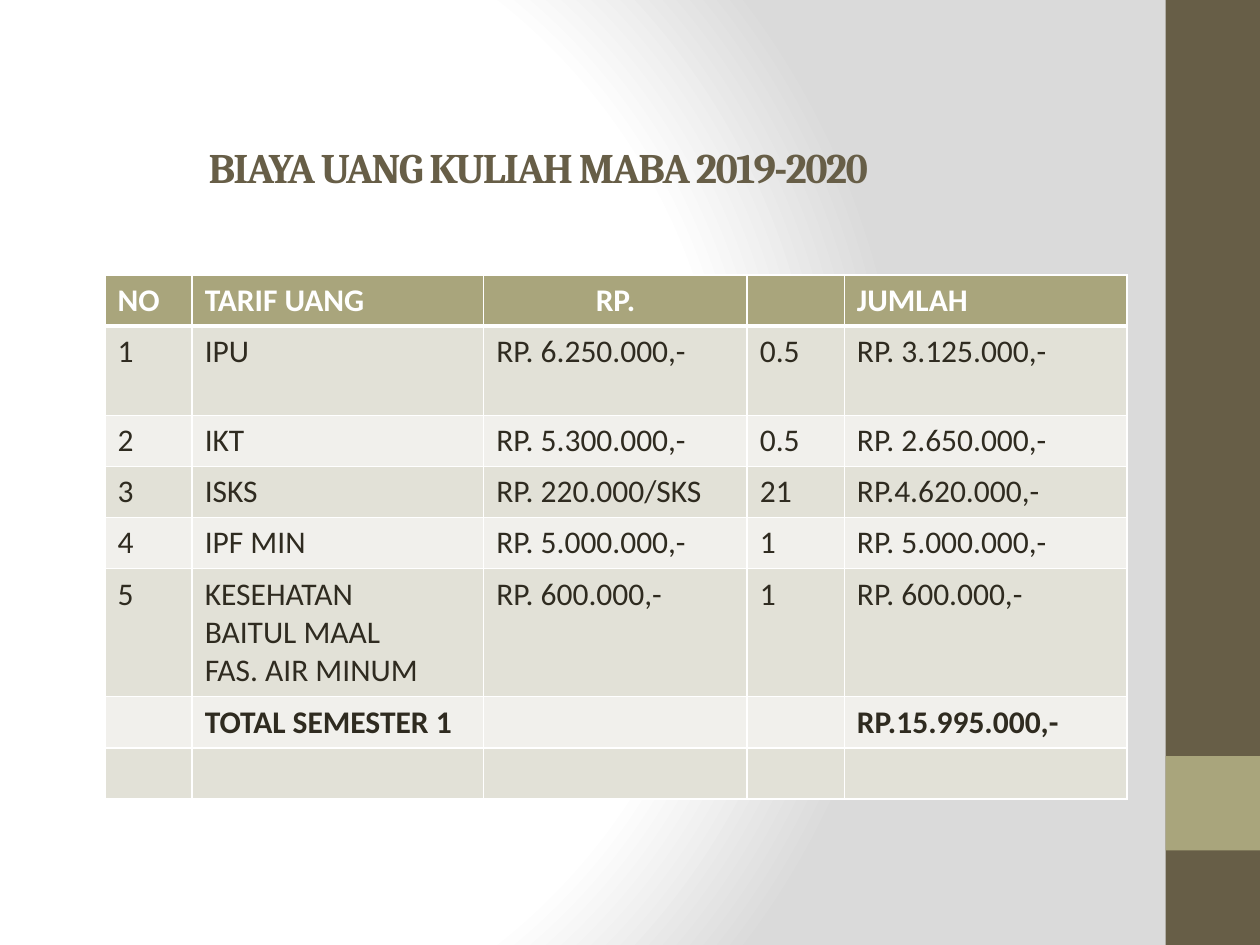
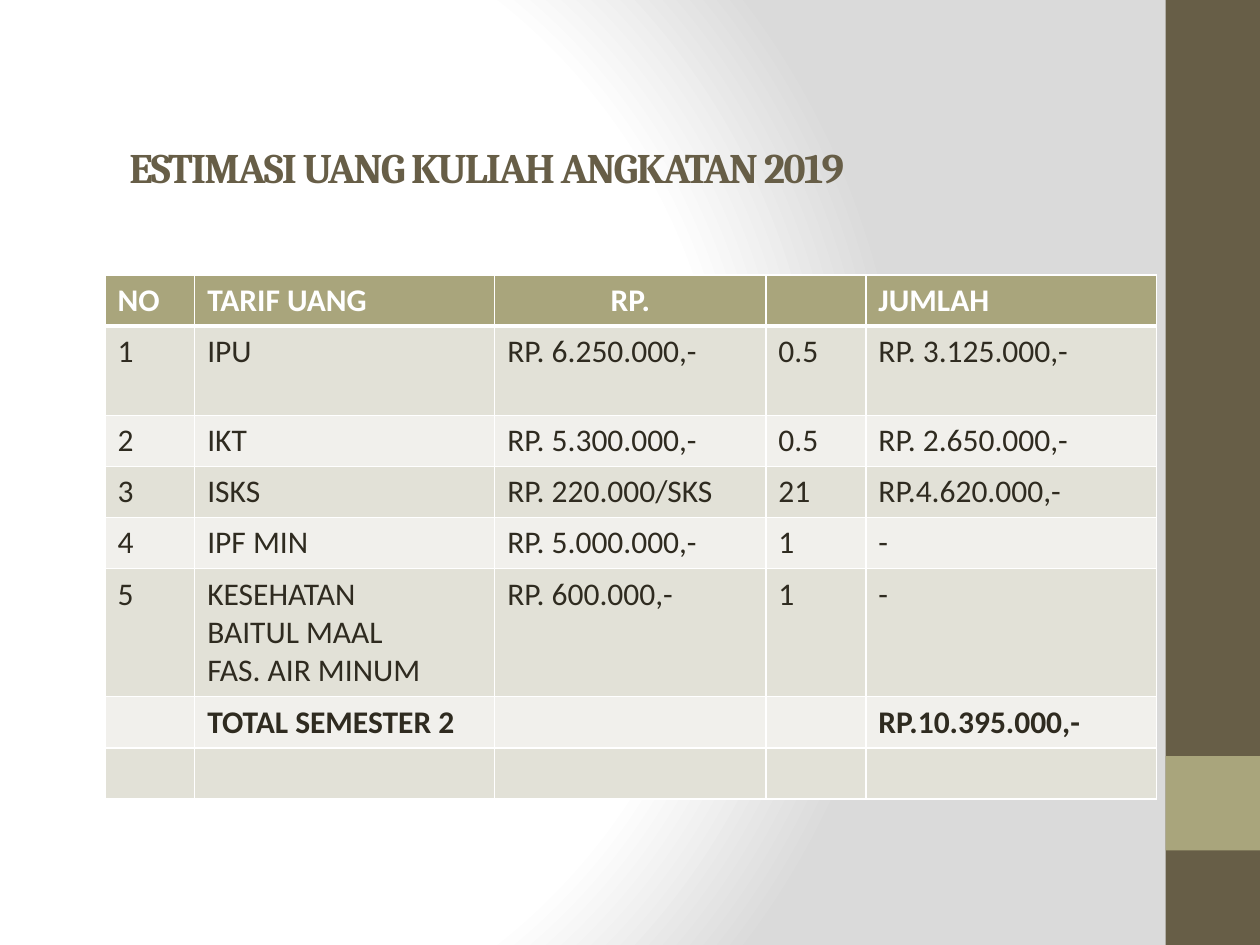
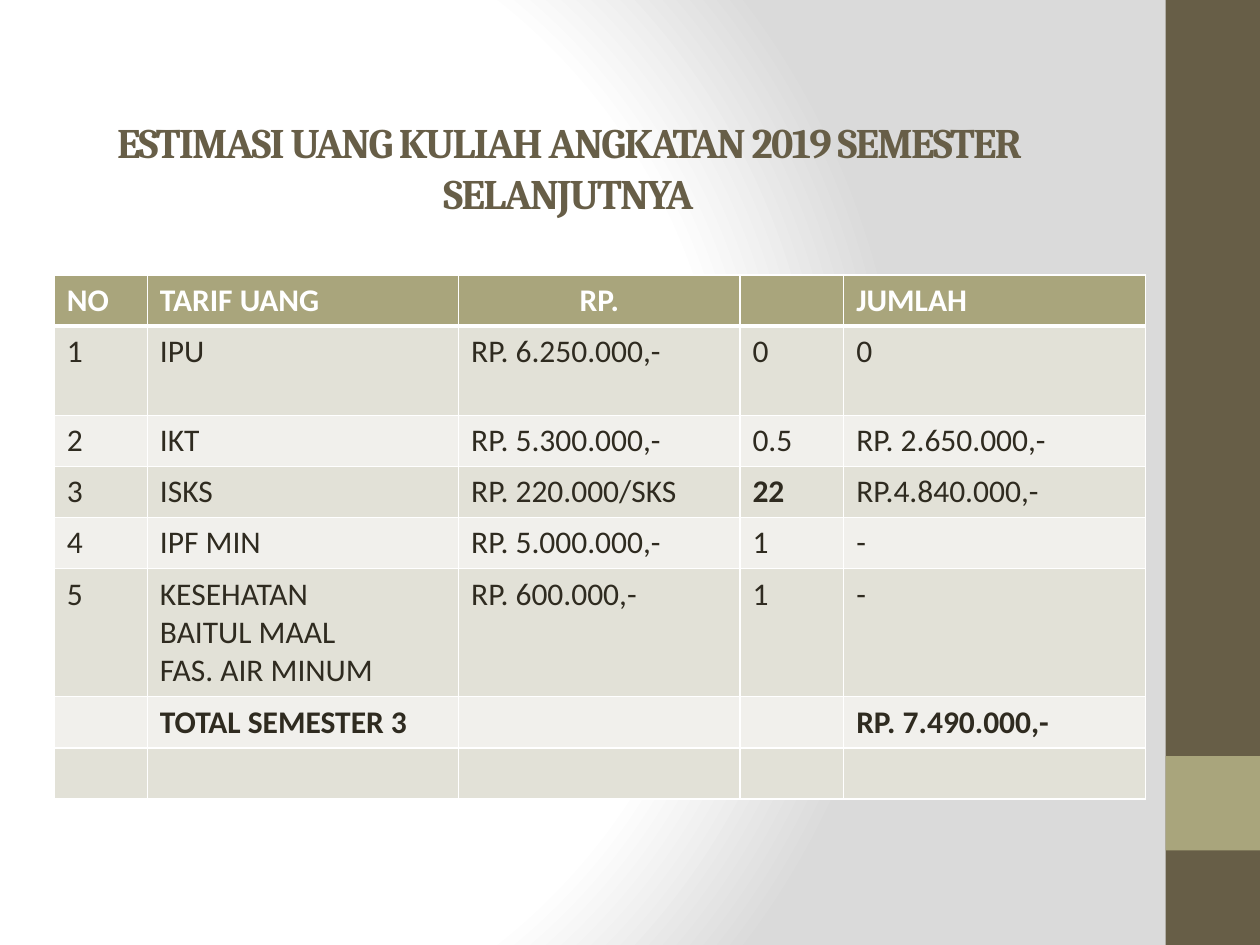
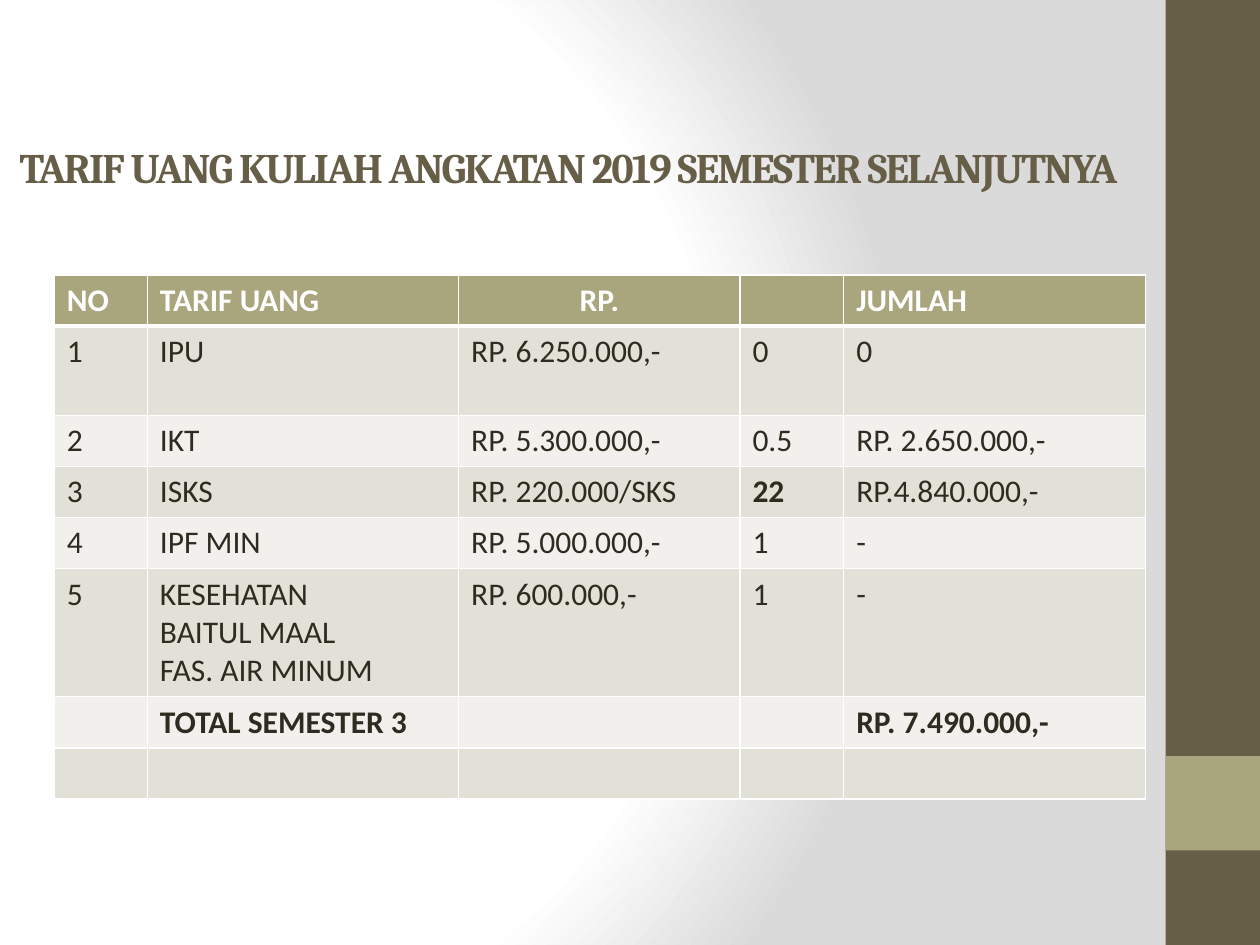
from dataclasses import dataclass

from pptx import Presentation
from pptx.dml.color import RGBColor
from pptx.enum.shapes import MSO_SHAPE
from pptx.enum.text import MSO_ANCHOR, MSO_AUTO_SIZE, PP_ALIGN
from pptx.oxml import parse_xml
from pptx.oxml.ns import nsdecls, qn
from pptx.slide import Slide, SlideMaster
from pptx.table import _Cell
from pptx.util import Pt

WHITE = RGBColor(0xFF, 0xFF, 0xFF)
GREY = RGBColor(0xDA, 0xDA, 0xDA)
BROWN = RGBColor(0x67, 0x5E, 0x47)
OLIVE = RGBColor(0xA9, 0xA5, 0x7C)
INK = RGBColor(0x2F, 0x2B, 0x20)
DARK = RGBColor(0xE2, 0xE1, 0xD7)
LIGHT = RGBColor(0xF1, 0xF0, 0xEC)

HEAD = ("NO", "TARIF UANG", "RP.", "", "JUMLAH")
FEES = (
    ("IPU", "RP. 6.250.000,-"),
    ("IKT", "RP. 5.300.000,-"),
    ("ISKS", "RP. 220.000/SKS"),
    ("IPF MIN", "RP. 5.000.000,-"),
    ("KESEHATAN\nBAITUL MAAL\nFAS. AIR MINUM", "RP. 600.000,-"),
)
SHARES = (87, 291, 263, 97, 282)
ROW = 29.2
HEIGHTS = (ROW, 51.2, ROW, ROW, ROW, 73, ROW, ROW)
TOTAL = 6


@dataclass(frozen=True)
class Band:
    top: float
    height: float
    color: RGBColor


@dataclass(frozen=True)
class Sheet:
    title: str
    span: float
    left: float
    width: float
    term: int
    counts: tuple[str, ...]
    sums: tuple[str, ...]
    total: str
    strong: str = ""

    def rows(self) -> list[tuple[str, ...]]:
        items = zip(FEES, self.counts, self.sums)
        body = [(str(no), *fee, count, due)
                for no, (fee, count, due) in enumerate(items, 1)]
        total = ("", f"TOTAL SEMESTER {self.term}", "", "", self.total)
        return [HEAD, *body, total, ("",) * len(HEAD)]


BANDS = (Band(0, 540, BROWN), Band(432, 54, OLIVE))
FIRST = ("0.5", "0.5", "21", "1", "1")
NEXT = ("0", "0.5", "22", "1", "1")
LATER = ("0", "RP. 2.650.000,-", "RP.4.840.000,-", "-", "-")
SHEETS = (
    Sheet("BIAYA UANG KULIAH MABA 2019-2020", 615, 60, 584, 1, FIRST,
          ("RP. 3.125.000,-", "RP. 2.650.000,-", "RP.4.620.000,-",
           "RP. 5.000.000,-", "RP. 600.000,-"), "RP.15.995.000,-"),
    Sheet("ESTIMASI UANG KULIAH ANGKATAN 2019", 556, 60, 601, 2, FIRST,
          ("RP. 3.125.000,-", "RP. 2.650.000,-", "RP.4.620.000,-", "-", "-"),
          "RP.10.395.000,-"),
    Sheet("ESTIMASI UANG KULIAH ANGKATAN 2019 SEMESTER SELANJUTNYA", 649.5,
          31, 623.5, 3, NEXT, LATER, "RP. 7.490.000,-", "22"),
    Sheet("TARIF UANG KULIAH ANGKATAN 2019 SEMESTER SELANJUTNYA", 649.5,
          31, 623.5, 3, NEXT, LATER, "RP. 7.490.000,-", "22"),
)


def set_back(master: SlideMaster) -> None:
    master.background.fill.solid()
    solid = master.element.find(f".//{qn('p:bgPr')}/{qn('a:solidFill')}")
    stops = "".join(
        f'<a:gs pos="{pos * 1000}"><a:srgbClr val="{color}"/></a:gs>'
        for pos, color in ((0, WHITE), (75, WHITE), (100, GREY)))
    solid.getparent().replace(solid, parse_xml(
        f'<a:gradFill {nsdecls("a")} rotWithShape="1"><a:gsLst>{stops}</a:gsLst>'
        '<a:path path="circle">'
        '<a:fillToRect l="20000" t="50000" r="100000" b="50000"/>'
        '</a:path></a:gradFill>'))


def add_band(slide: Slide, band: Band) -> None:
    shape = slide.shapes.add_shape(
        MSO_SHAPE.RECTANGLE, Pt(666), Pt(band.top), Pt(54), Pt(band.height))
    shape.shadow.inherit = False
    shape.fill.solid()
    shape.fill.fore_color.rgb = band.color
    shape.line.fill.background()


def set_title(slide: Slide, sheet: Sheet) -> None:
    title = slide.shapes.title
    title.left, title.top = Pt(0), Pt(60.5)
    title.width, title.height = Pt(sheet.span), Pt(70)
    frame = title.text_frame
    frame.text = sheet.title
    frame.word_wrap = True
    frame.auto_size = MSO_AUTO_SIZE.NONE
    frame.vertical_anchor = MSO_ANCHOR.MIDDLE
    para = frame.paragraphs[0]
    para.alignment = PP_ALIGN.CENTER
    font = para.runs[0].font
    font.name, font.size, font.bold = "Cambria", Pt(24), True
    font.color.rgb = BROWN
    para.runs[0].font._element.set("spc", "-100")


def set_edges(cell: _Cell, row: int) -> None:
    props = cell._tc.get_or_add_tcPr()
    thick = {0: "B", 1: "T"}.get(row)
    for side in "LRTB":
        width = Pt(3 if side == thick else 1)
        props.append(parse_xml(
            f'<a:ln{side} {nsdecls("a")} w="{width}"><a:solidFill>'
            f'<a:srgbClr val="{WHITE}"/></a:solidFill></a:ln{side}>'))


def set_cell(cell: _Cell, text: str, row: int, bold: bool) -> None:
    set_edges(cell, row)
    cell.fill.solid()
    cell.fill.fore_color.rgb = OLIVE if row == 0 else DARK if row % 2 else LIGHT
    if not text:
        return
    cell.text_frame.text = text
    for para in cell.text_frame.paragraphs:
        if text == "RP.":
            para.alignment = PP_ALIGN.CENTER
        font = para.runs[0].font
        font.name, font.size, font.bold = "Calibri", Pt(18), bold
        font.color.rgb = INK if row else WHITE


def add_fees(slide: Slide, sheet: Sheet) -> None:
    table = slide.shapes.add_table(
        len(HEIGHTS), len(HEAD), Pt(sheet.left), Pt(157),
        Pt(sheet.width), Pt(sum(HEIGHTS))).table
    table.horz_banding = False
    for col, share in zip(table.columns, SHARES):
        col.width = Pt(sheet.width * share / sum(SHARES))
    for row, height in zip(table.rows, HEIGHTS):
        row.height = Pt(height)
    for r, texts in enumerate(sheet.rows()):
        for c, text in enumerate(texts):
            bold = r in (0, TOTAL) or text == sheet.strong
            set_cell(table.cell(r, c), text, r, bold)


def main() -> None:
    deck = Presentation()
    deck.slide_width, deck.slide_height = Pt(720), Pt(540)
    set_back(deck.slide_master)
    for sheet in SHEETS:
        slide = deck.slides.add_slide(deck.slide_layouts[5])
        for band in BANDS:
            add_band(slide, band)
        add_fees(slide, sheet)
        set_title(slide, sheet)
    deck.save("out.pptx")


if __name__ == "__main__":
    main()
